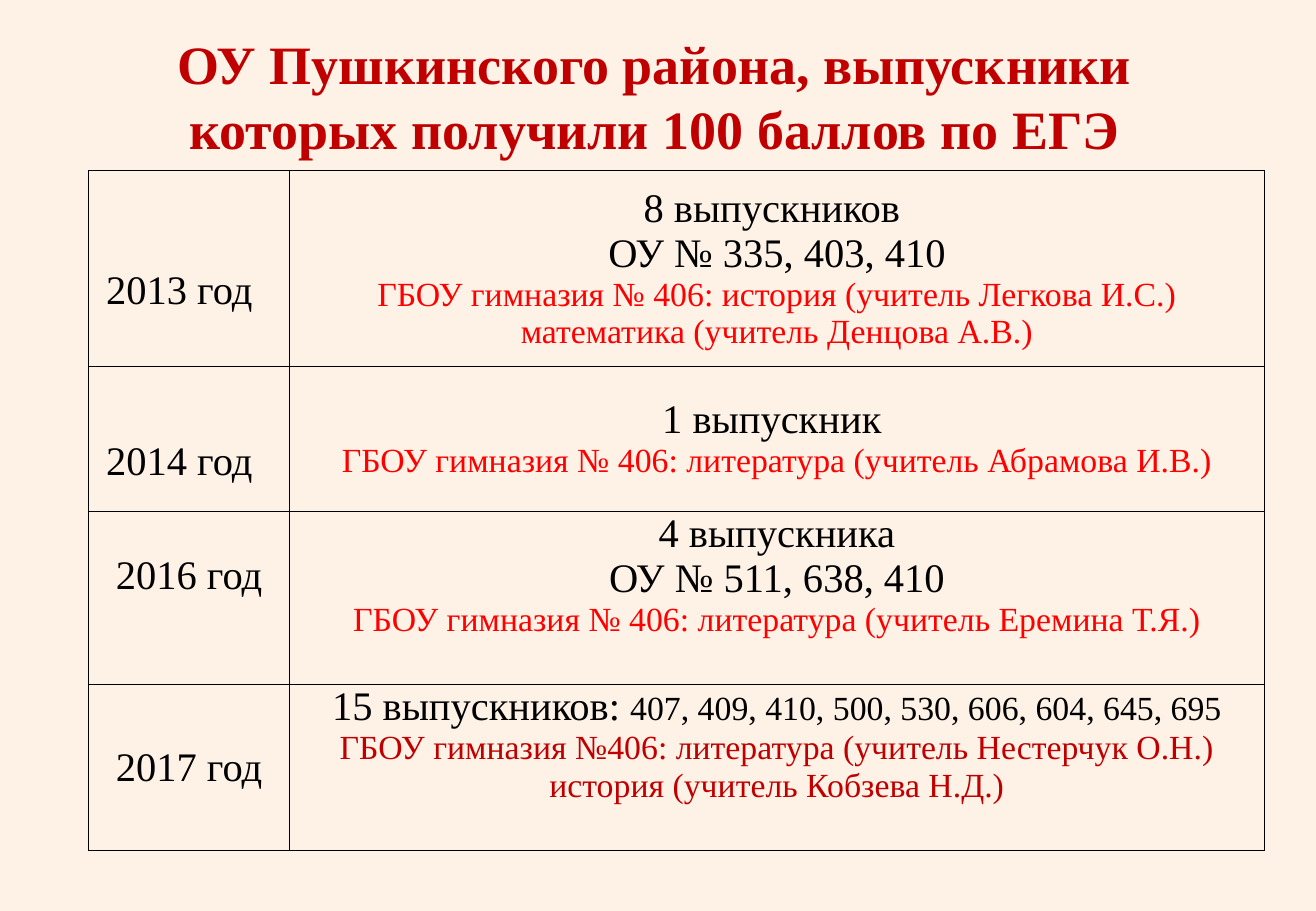
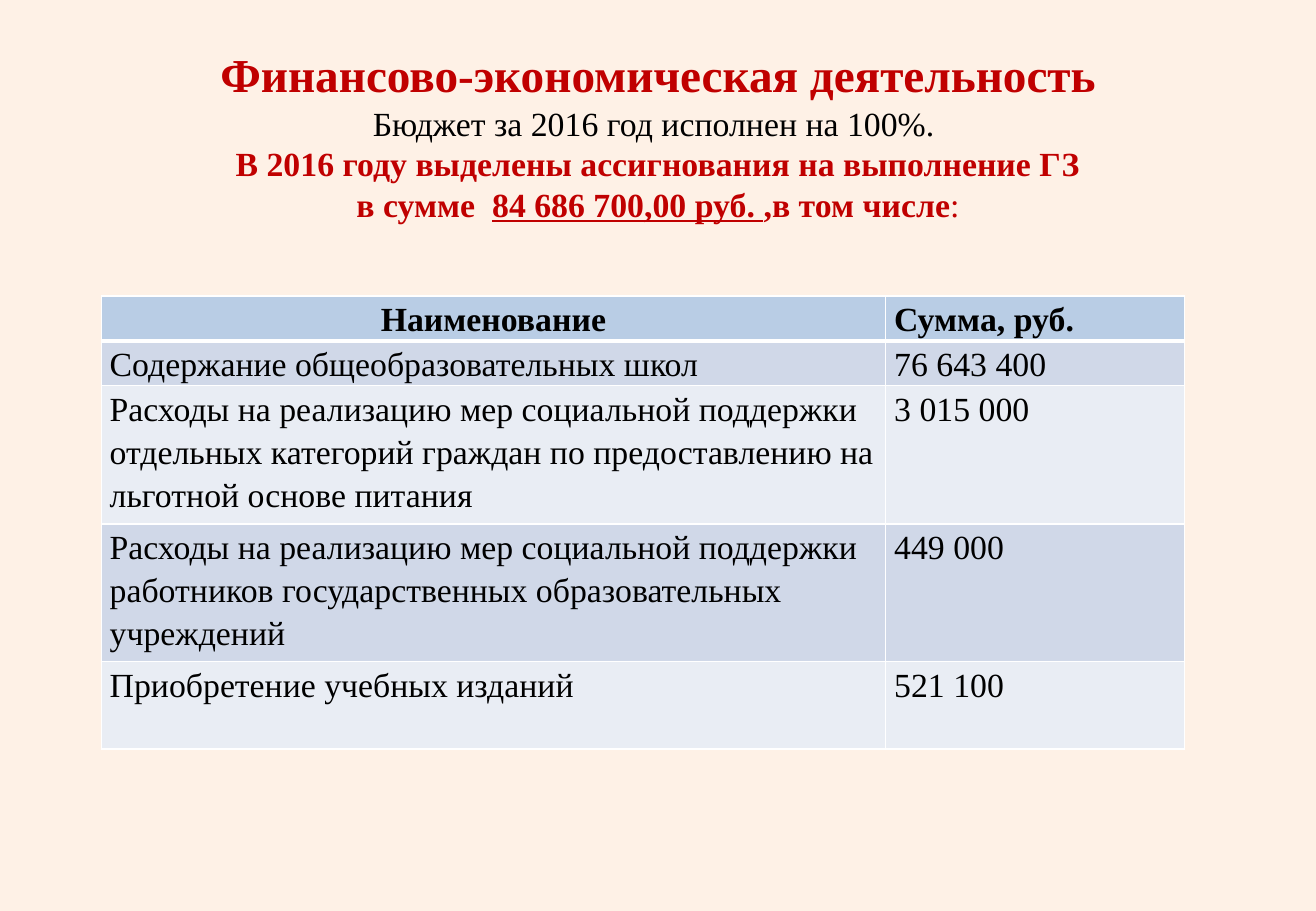
from lxml import etree
from pptx import Presentation
from pptx.dml.color import RGBColor
from pptx.enum.text import MSO_ANCHOR, MSO_AUTO_SIZE, PP_ALIGN
from pptx.oxml.ns import qn
from pptx.util import Pt

TOP, MID = MSO_ANCHOR.TOP, MSO_ANCHOR.MIDDLE
LEFT, CENTER = PP_ALIGN.LEFT, PP_ALIGN.CENTER
FIXED = MSO_AUTO_SIZE.NONE
TITLE_ONLY = 5

FONT = "Times New Roman"
BACK, BLACK, WHITE = "FEF1E6", "000000", "FFFFFF"
DARK, RED = "C00000", "FF0000"
HEAD, ODD, EVEN = "B9CDE5", "D0D8E8", "E9EDF4"


def rgb(code):
    return RGBColor.from_string(code)


def run(text, size=20, color=BLACK, bold=False, under=False):
    return text, size, color, bold, under


class Deck:
    def __init__(self, wide, high):
        self.prs = Presentation()
        self.prs.slide_width, self.prs.slide_height = Pt(wide), Pt(high)
        fill = self.prs.slide_master.background.fill
        fill.solid()
        fill.fore_color.rgb = rgb(BACK)
        self.slide = None

    def add(self):
        layout = self.prs.slide_layouts[TITLE_ONLY]
        self.slide = self.prs.slides.add_slide(layout)

    def put_text(self, frame, lines, align, space=1.0):
        """Fill a frame; each line is a list of runs."""
        for i, line in enumerate(lines):
            para = frame.paragraphs[0] if i == 0 else frame.add_paragraph()
            para.alignment, para.line_spacing = align, space
            for text, size, color, bold, under in line:
                part = para.add_run()
                part.text = text
                font = part.font
                font.name, font.size = FONT, Pt(size)
                font.bold, font.underline = bold, under
                font.color.rgb = rgb(color)

    def title(self, box, lines, anchor=MID, inset=3.6):
        shape = self.slide.shapes.title
        shape.left, shape.top, shape.width, shape.height = map(Pt, box)
        frame = shape.text_frame
        frame.auto_size, frame.word_wrap = FIXED, True
        frame.vertical_anchor, frame.margin_top = anchor, Pt(inset)
        self.put_text(frame, lines, CENTER)

    def table(self, left, top, cols, rows):
        size = Pt(sum(cols)), Pt(sum(rows))
        frame = self.slide.shapes.add_table(
            len(rows), len(cols), Pt(left), Pt(top), *size)
        table = frame.table
        table.first_row = table.horz_banding = False
        for col, width in zip(table.columns, cols):
            col.width = Pt(width)
        for row, height in zip(table.rows, rows):
            row.height = Pt(height)
        return table

    def cell(self, cell, lines, fill, edges, color, align=CENTER,
             anchor=MID, pads=(0.5, 0.5, 0.5, 0), space=1.0):
        """Edges are widths and pads are insets: left, right, top, bottom."""
        props = cell._tc.get_or_add_tcPr()
        for side, width in zip("LRTB", edges):
            line = etree.SubElement(props, qn(f"a:ln{side}"), w=str(Pt(width)))
            solid = etree.SubElement(line, qn("a:solidFill"))
            etree.SubElement(solid, qn("a:srgbClr"), val=color)
        cell.fill.solid()
        cell.fill.fore_color.rgb = rgb(fill)
        cell.vertical_anchor = anchor
        (cell.margin_left, cell.margin_right,
         cell.margin_top, cell.margin_bottom) = map(Pt, pads)
        self.put_text(cell.text_frame, lines, align, space)


def scores(deck):
    deck.add()
    name = "ОУ Пушкинского района, выпускники которых получили 100 баллов по ЕГЭ"
    deck.title((64, 11.5, 648, 90), [[run(name, 32, DARK, True)]])
    low, high = (0.5, 12, 27, 0), (0.5, 0.5, 0.5, 26)
    plain = (0.5, 0.5, 0.5, 0)
    years = [
        ("2013 год", low, MID, [
            [run("8 выпускников ", 24)],
            [run("ОУ № 335, 403, 410", 24)],
            [run("ГБОУ гимназия № 406: история (учитель Легкова И.С.)", 20, RED)],
            [run("математика (учитель Денцова А.В.)", 20, RED)]]),
        ("2014 год", low, MID, [
            [run("1 выпускник ", 24)],
            [run("ГБОУ гимназия № 406: литература (учитель Абрамова И.В.)", 20, RED)]]),
        ("2016 год", high, TOP, [
            [run("4 выпускника", 24)],
            [run("ОУ № 511, 638, 410", 24)],
            [run("ГБОУ гимназия № 406: литература (учитель Еремина Т.Я.)", 20, RED)]]),
        ("2017 год", plain, TOP, [
            [run("15 выпускников: ", 24),
             run("407, 409, 410, 500, 530, 606, 604, 645, 695")],
            [run("ГБОУ гимназия №406: литература (учитель Нестерчук О.Н.)", 20, DARK)],
            [run("история (учитель Кобзева Н.Д.)", 20, DARK)]]),
    ]
    table = deck.table(52.5, 101, (119, 578), (116, 86, 102.5, 98.5))
    style = BACK, [0.5] * 4, BLACK
    for i, (year, pads, anchor, lines) in enumerate(years):
        deck.cell(table.cell(i, 0), [[run(year, 24)]], *style, pads=pads)
        deck.cell(table.cell(i, 1), lines, *style, anchor=anchor)


def budget(deck):
    deck.add()
    deck.title((39, 12, 702, 150), [
        [run("Финансово-экономическая деятельность", 28, DARK, True)],
        [run("Бюджет за 2016 год исполнен на 100%. ")],
        [run("В 2016 году выделены ассигнования на выполнение ГЗ", 20, DARK, True)],
        [run("в сумме  ", 20, DARK, True),
         run("84 686 700,00 руб. ", 20, DARK, True, True),
         run(",в том числе", 20, DARK, True),
         run(":", 20, DARK)],
    ], TOP, 15)
    costs = [
        ("Наименование", "Сумма, руб."),
        ("Содержание общеобразовательных школ", "76 643 400"),
        ("Расходы на реализацию мер социальной поддержки отдельных "
         "категорий граждан по предоставлению на льготной основе питания",
         "3 015 000"),
        ("Расходы на реализацию мер социальной поддержки работников "
         "государственных образовательных учреждений", "449 000"),
        ("Приобретение учебных изданий", "521 100"),
    ]
    table = deck.table(60, 175.5, (465, 177), (26.6, 26.6, 82, 81.4, 52))
    for i, row in enumerate(costs):
        head = i == 0
        fill = HEAD if head else ODD if i % 2 else EVEN
        edges = 1, 1, 3 if i == 1 else 1, 3 if head else 1
        for j, text in enumerate(row):
            deck.cell(table.cell(i, j), [[run(text, bold=head)]], fill, edges,
                      WHITE, CENTER if head and j == 0 else LEFT, TOP,
                      (5, 5, 0, 0), 1.15)


def main():
    deck = Deck(780, 540)
    scores(deck)
    budget(deck)
    deck.prs.save("out.pptx")


if __name__ == "__main__":
    main()
